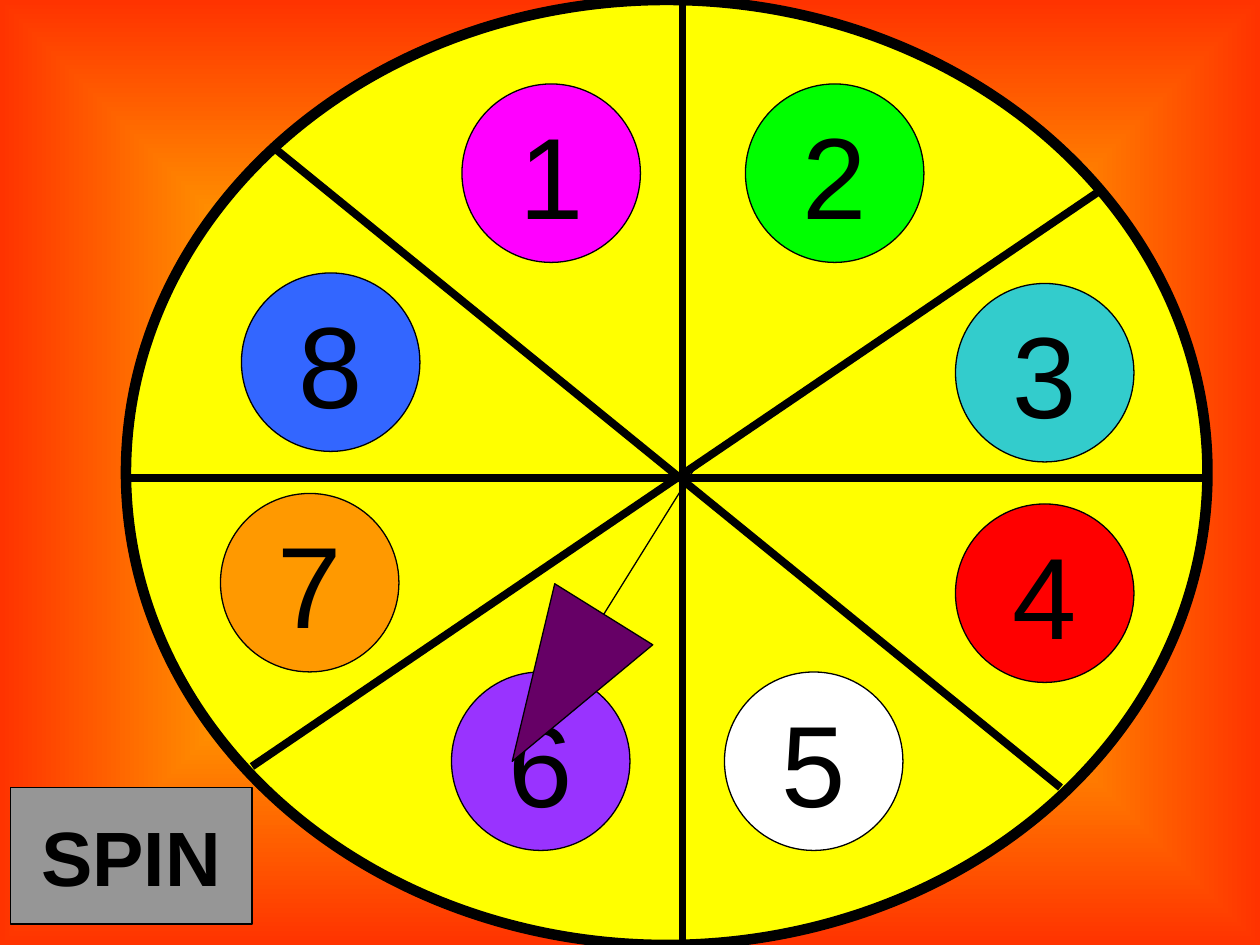
import dataclasses
import typing

import lxml.etree
import pptx
import pptx.dml.color
import pptx.enum.shapes
import pptx.enum.text
import pptx.oxml.ns
import pptx.shapes.autoshape
import pptx.slide
import pptx.util

Pt = pptx.util.Pt
RGB = pptx.dml.color.RGBColor.from_string
qn = pptx.oxml.ns.qn
KIND = pptx.enum.shapes.MSO_SHAPE


@dataclasses.dataclass(frozen=True)
class Theme:
    ink: str = "000000"
    wheel: str = "FFFF00"
    edge: str = "FF3300"
    arrow: str = "660066"
    button: str = "969696"
    font: str = "Arial"
    digit: int = 66
    label: int = 44
    rim: float = 6
    spoke: float = 4.5
    thin: float = 0.75


class Box(typing.NamedTuple):
    left: float
    top: float
    width: float
    height: float


class Spoke(typing.NamedTuple):
    x1: float
    y1: float
    x2: float
    y2: float


class Disc(typing.NamedTuple):
    left: float
    top: float
    fill: str


THEME = Theme()
DISC_SIZE = 102

SPOKES = [
    Spoke(72, 273, 690, 273),
    Spoke(390, 0, 390, 540),
    Spoke(144, 438, 630, 108),
    Spoke(606, 450, 156, 84),
]

DISCS = [
    Disc(264, 48, "FF00FF"),
    Disc(426, 48, "00FF00"),
    Disc(546, 162, "33CCCC"),
    Disc(546, 288, "FF0000"),
    Disc(414, 384, "FFFFFF"),
    Disc(258, 384, "9933FF"),
    Disc(126, 282, "FF9900"),
    Disc(138, 156, "3366FF"),
]


def assign(item: typing.Any, form: dict[str, typing.Any]) -> None:
    for name, value in form.items():
        setattr(item, name, value)


def paint_back(slide: pptx.slide.Slide) -> None:
    fill = slide.background.fill
    fill.gradient()
    for stop, tone in zip(fill.gradient_stops, (THEME.wheel, THEME.edge)):
        stop.color.rgb = RGB(tone)
    grad = slide.element.find(".//" + qn("a:gradFill"))
    grad.remove(grad.find(qn("a:lin")))
    trail = lxml.etree.SubElement(grad, qn("a:path"), {"path": "shape"})
    sides = dict.fromkeys("ltrb", "50000")
    lxml.etree.SubElement(trail, qn("a:fillToRect"), sides)


def draw_shape(
    slide: pptx.slide.Slide, kind: KIND, box: Box, fill: str, line: float
) -> pptx.shapes.autoshape.Shape:
    shape = slide.shapes.add_shape(kind, *map(Pt, box))
    shape.shadow.inherit = False
    shape.fill.solid()
    shape.fill.fore_color.rgb = RGB(fill)
    shape.line.color.rgb = RGB(THEME.ink)
    shape.line.width = Pt(line)
    return shape


def draw_spoke(slide: pptx.slide.Slide, spoke: Spoke) -> None:
    link = slide.shapes.add_connector(
        pptx.enum.shapes.MSO_CONNECTOR.STRAIGHT, *map(Pt, spoke)
    )
    link.line.color.rgb = RGB(THEME.ink)
    link.line.width = Pt(THEME.spoke)
    lxml.etree.SubElement(link.element.spPr, qn("a:effectLst"))


def write(
    shape: pptx.shapes.autoshape.Shape, text: str, size: float, bold: bool = False
) -> None:
    frame = shape.text_frame
    assign(frame, {
        "word_wrap": False,
        "vertical_anchor": pptx.enum.text.MSO_ANCHOR.MIDDLE,
    })
    para = frame.paragraphs[0]
    para.alignment = pptx.enum.text.PP_ALIGN.CENTER
    run = para.add_run()
    run.text = text
    assign(run.font, {"name": THEME.font, "size": Pt(size), "bold": bold})
    run.font.color.rgb = RGB(THEME.ink)


def main() -> None:
    deck = pptx.Presentation()
    assign(deck, {"slide_width": Pt(720), "slide_height": Pt(540)})
    slide = deck.slides.add_slide(deck.slide_layouts[6])
    paint_back(slide)

    draw_shape(slide, KIND.OVAL, Box(72, 0, 618, 540), THEME.wheel, THEME.rim)
    for spoke in SPOKES:
        draw_spoke(slide, spoke)
    for count, disc in enumerate(DISCS, 1):
        box = Box(disc.left, disc.top, DISC_SIZE, DISC_SIZE)
        shape = draw_shape(slide, KIND.OVAL, box, disc.fill, THEME.thin)
        write(shape, str(count), THEME.digit)

    arrow = draw_shape(
        slide, KIND.UP_ARROW, Box(312, 252, 66, 198), THEME.arrow, THEME.thin
    )
    arrow.rotation = 211.9
    arrow.adjustments[0] = -0.02
    arrow.adjustments[1] = 1.5

    button = draw_shape(
        slide, KIND.ACTION_BUTTON_CUSTOM, Box(6, 450, 138, 78),
        THEME.button, THEME.thin,
    )
    write(button, "SPIN", THEME.label, bold=True)
    deck.save("out.pptx")


if __name__ == "__main__":
    main()
